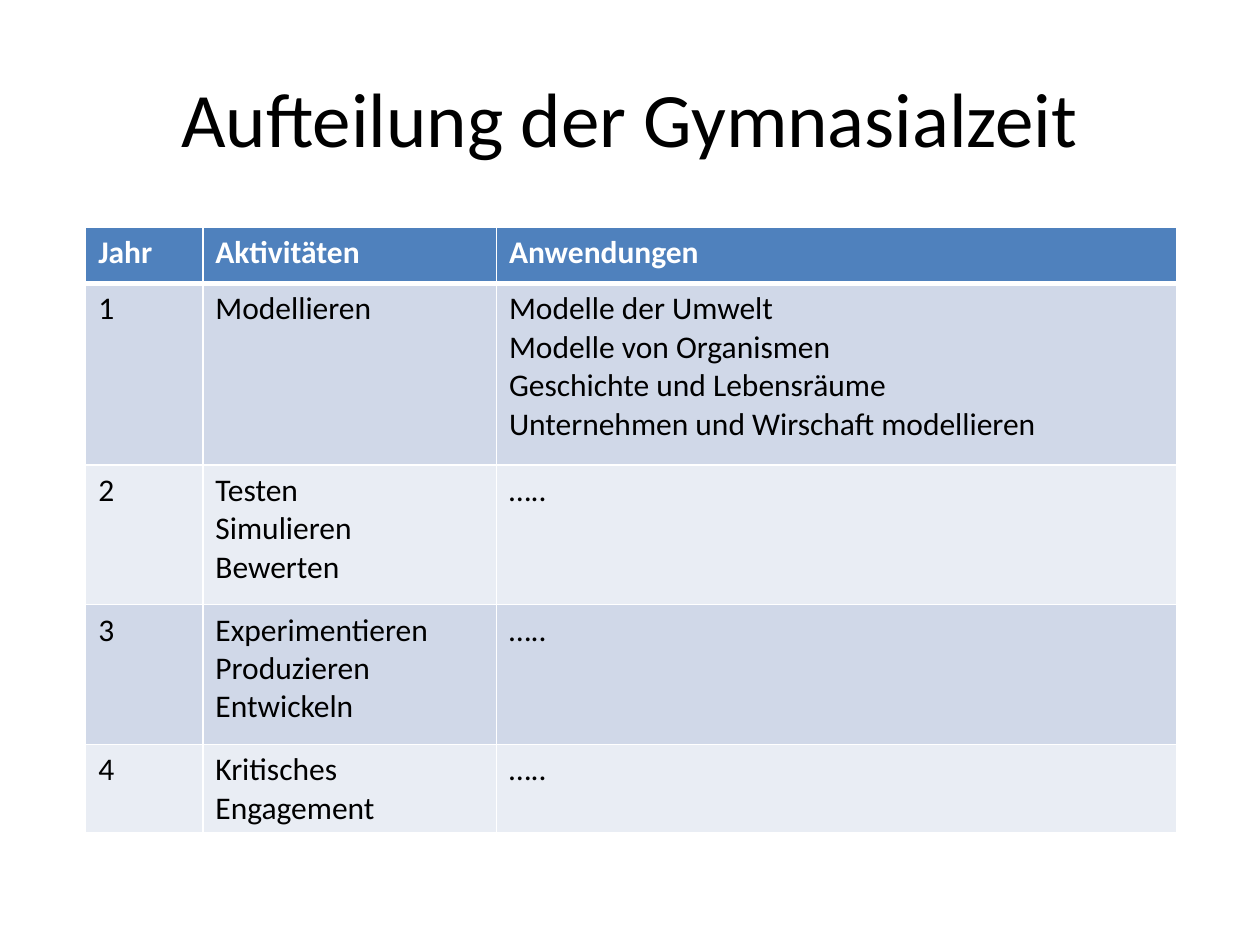
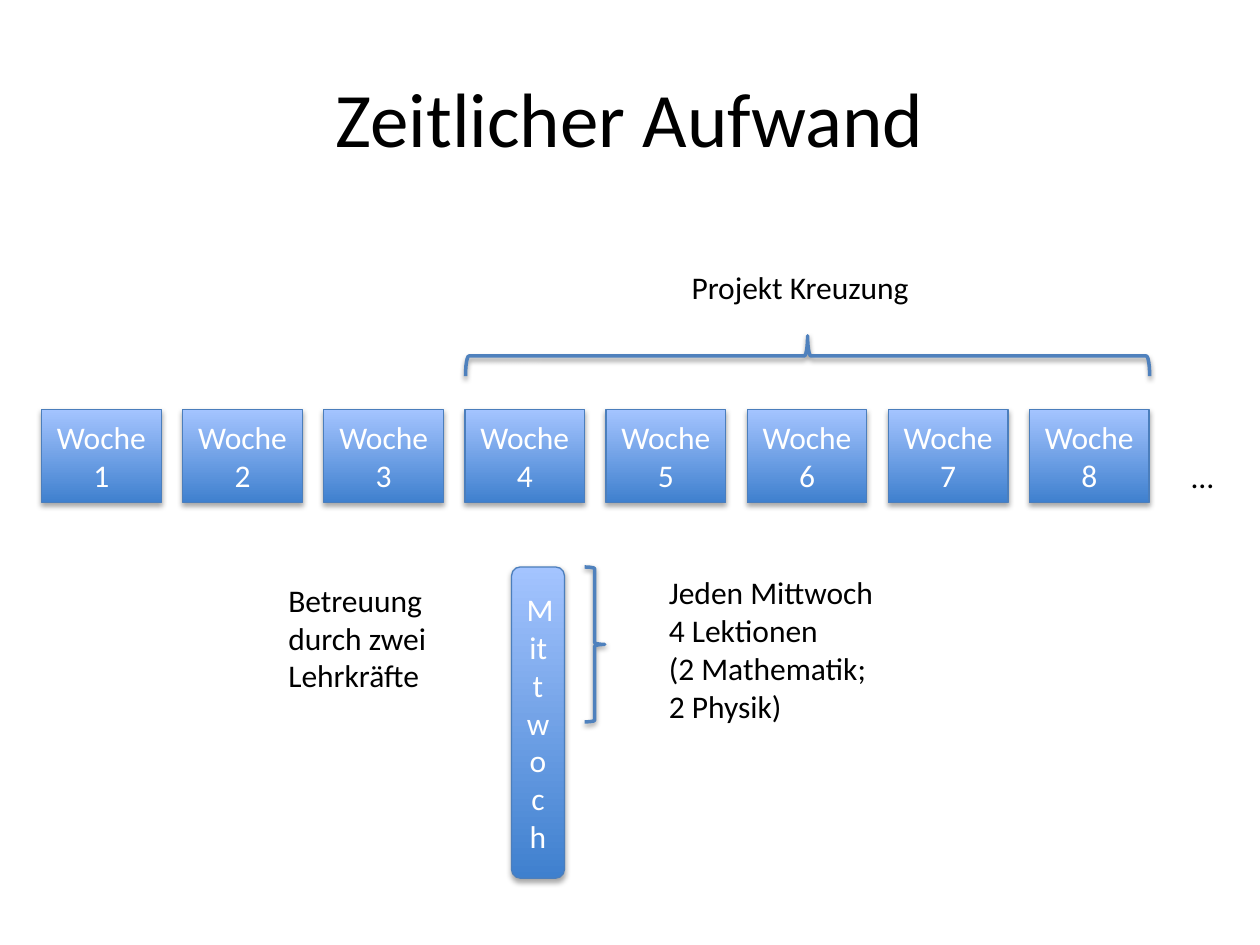
"""Builds two slides on the plan of a school project: years and weekly effort."""
from dataclasses import dataclass

from lxml import etree
from pptx import Presentation
from pptx.dml.color import RGBColor
from pptx.enum.shapes import MSO_SHAPE
from pptx.enum.text import MSO_ANCHOR, MSO_AUTO_SIZE, PP_ALIGN
from pptx.oxml.ns import qn
from pptx.presentation import Presentation as Deck
from pptx.shapes.autoshape import Shape
from pptx.slide import Slide
from pptx.table import _Cell
from pptx.text.text import TextFrame
from pptx.util import Emu, Inches, Pt

RECTANGLE = MSO_SHAPE.RECTANGLE
ROUNDED = MSO_SHAPE.ROUNDED_RECTANGLE
BRACE = MSO_SHAPE.RIGHT_BRACE
LEFT, CENTER = PP_ALIGN.LEFT, PP_ALIGN.CENTER
TOP, MIDDLE = MSO_ANCHOR.TOP, MSO_ANCHOR.MIDDLE
FIT_TEXT = MSO_AUTO_SIZE.SHAPE_TO_FIT_TEXT


@dataclass(frozen=True)
class Theme:
    """Colours, font, type sizes and line widths of the deck."""
    font: str = "Calibri"
    title_size: int = 44
    body_size: int = 18
    black: str = "000000"
    white: str = "FFFFFF"
    accent: str = "4F81BD"
    outline: str = "4B7EBC"
    gradient: tuple[str, str] = ("3F80CE", "A4C4FF")
    bands: tuple[str, str] = ("D0D8E8", "E9EDF4")
    block_line: float = 0.75
    brace_line: float = 2
    cell_line: float = 1
    header_line: float = 3


@dataclass(frozen=True)
class Area:
    """Place and size in inches."""
    left: float
    top: float
    width: float
    height: float

    def lengths(self) -> tuple[Emu, Emu, Emu, Emu]:
        """Return the four measures as lengths."""
        return (Inches(self.left), Inches(self.top),
                Inches(self.width), Inches(self.height))


@dataclass(frozen=True)
class Shadow:
    """Soft black shadow that falls straight down."""
    opacity: int
    distance: float
    blur: float = 3.1


@dataclass(frozen=True)
class Label:
    """Free text, one paragraph a line."""
    area: Area
    lines: tuple[str, ...]


@dataclass(frozen=True)
class Brace:
    """Right brace with its turn in degrees."""
    area: Area
    rotation: int = 0


@dataclass(frozen=True)
class Year:
    """One year of the school plan."""
    number: str
    activities: tuple[str, ...]
    applications: tuple[str, ...] = ("…..",)
    height: float = 1.11


THEME = Theme()
TITLE_AREA = Area(0.5, 0.3, 9, 1.25)
BLOCK_SHADOW = Shadow(35, 1.8)
BRACE_SHADOW = Shadow(38, 1.6)

PLAN_AREA = Area(0.68, 1.8, 8.66, 4.82)
PLAN_COLUMNS = (0.93, 2.33, 5.4)
HEADINGS = ("Jahr", "Aktivitäten", "Anwendungen")
HEADING_HEIGHT = 0.45
YEARS = (
    Year("1", ("Modellieren",),
         ("Modelle der Umwelt", "Modelle von Organismen",
          "Geschichte und Lebensräume",
          "Unternehmen und Wirschaft modellieren"), 1.44),
    Year("2", ("Testen", "Simulieren", "Bewerten")),
    Year("3", ("Experimentieren", "Produzieren", "Entwickeln")),
    Year("4", ("Kritisches Engagement",), height=0.7),
)

WEEK_COUNT = 8
WEEK_PITCH = 1.12
FIRST_WEEK = Area(0.33, 3.25, 0.95, 0.74)
WEDNESDAY = Area(4.06, 4.5, 0.42, 2.47)
BRACES = (
    Brace(Area(6.25, 0.11, 0.32, 5.43), 270),
    Brace(Area(4.64, 4.5, 0.16, 1.23)),
)
LABELS = (
    Label(Area(5.39, 2.08, 1.94, 0.4), ("Projekt Kreuzung",)),
    Label(Area(5.21, 4.5, 1.84, 1.31),
          ("Jeden Mittwoch", "4 Lektionen", "(2 Mathematik;", "2 Physik)")),
    Label(Area(9.36, 3.58, 0.38, 0.4), ("…",)),
    Label(Area(2.19, 4.56, 1.34, 1.01),
          ("Betreuung", "durch zwei", "Lehrkräfte")),
)


def write(frame: TextFrame, lines: tuple[str, ...], color: str,
          size: int = THEME.body_size, align: PP_ALIGN = LEFT,
          bold: bool = False) -> None:
    """Write each line as a paragraph of one run."""
    for index, line in enumerate(lines):
        para = frame.add_paragraph() if index else frame.paragraphs[0]
        para.alignment = align
        span = para.add_run()
        span.text = line
        span.font.name = THEME.font
        span.font.size = Pt(size)
        span.font.bold = bold
        span.font.color.rgb = RGBColor.from_string(color)


def add_titled_page(deck: Deck, title: str) -> Slide:
    """Add a blank page with a centred title."""
    page = deck.slides.add_slide(deck.slide_layouts[6])
    frame = page.shapes.add_textbox(*TITLE_AREA.lengths()).text_frame
    frame.word_wrap = True
    frame.vertical_anchor = MIDDLE
    write(frame, (title,), THEME.black, THEME.title_size, CENTER)
    return page


def add_label(page: Slide, label: Label) -> None:
    """Add text that does not wrap."""
    frame = page.shapes.add_textbox(*label.area.lengths()).text_frame
    frame.word_wrap = False
    frame.auto_size = FIT_TEXT
    frame.vertical_anchor = TOP
    write(frame, label.lines, THEME.black)


def outline(shape: Shape, color: str, width: float, shadow: Shadow) -> None:
    """Set a shape's line and its shadow."""
    shape.line.color.rgb = RGBColor.from_string(color)
    shape.line.width = Pt(width)
    shape.shadow.inherit = False
    effects = shape._element.spPr.find(qn("a:effectLst"))
    outer = etree.SubElement(
        effects, qn("a:outerShdw"), blurRad=str(Pt(shadow.blur)),
        dist=str(Pt(shadow.distance)), dir="5400000", rotWithShape="0")
    color_node = etree.SubElement(outer, qn("a:srgbClr"), val=THEME.black)
    etree.SubElement(color_node, qn("a:alpha"), val=str(shadow.opacity * 1000))


def add_block(page: Slide, kind: MSO_SHAPE, area: Area, text: str) -> None:
    """Add a block with a gradient and centred white text."""
    block = page.shapes.add_shape(kind, *area.lengths())
    block.fill.gradient()
    block.fill.gradient_angle = 90
    for stop, color in zip(block.fill.gradient_stops, THEME.gradient):
        stop.color.rgb = RGBColor.from_string(color)
    outline(block, THEME.outline, THEME.block_line, BLOCK_SHADOW)
    block.text_frame.word_wrap = True
    block.text_frame.vertical_anchor = MIDDLE
    write(block.text_frame, (text,), THEME.white, align=CENTER)


def add_brace(page: Slide, brace: Brace) -> None:
    """Add an open brace."""
    shape = page.shapes.add_shape(BRACE, *brace.area.lengths())
    shape.rotation = brace.rotation
    shape.fill.background()
    outline(shape, THEME.accent, THEME.brace_line, BRACE_SHADOW)


def paint_cell(cell: _Cell, fill: str, top: float, bottom: float) -> None:
    """Fill a cell and give it white borders."""
    cell.fill.solid()
    cell.fill.fore_color.rgb = RGBColor.from_string(fill)
    properties = cell._tc.get_or_add_tcPr()
    widths = {"a:lnL": THEME.cell_line, "a:lnR": THEME.cell_line,
              "a:lnT": top, "a:lnB": bottom}
    for index, (tag, width) in enumerate(widths.items()):
        border = etree.Element(qn(tag), w=str(Pt(width)))
        solid = etree.SubElement(border, qn("a:solidFill"))
        etree.SubElement(solid, qn("a:srgbClr"), val=THEME.white)
        properties.insert(index, border)


def build_plan(deck: Deck) -> None:
    """Build the page with the table of school years."""
    page = add_titled_page(deck, "Aufteilung der Gymnasialzeit")
    table = page.shapes.add_table(
        len(YEARS) + 1, len(HEADINGS), *PLAN_AREA.lengths()).table
    for column, width in zip(table.columns, PLAN_COLUMNS):
        column.width = Inches(width)
    heights = (HEADING_HEIGHT, *(year.height for year in YEARS))
    for row, height in zip(table.rows, heights):
        row.height = Inches(height)
    contents = [tuple((heading,) for heading in HEADINGS)]
    contents += [((year.number,), year.activities, year.applications)
                 for year in YEARS]
    for index, entries in enumerate(contents):
        header = index == 0
        fill = THEME.accent if header else THEME.bands[(index - 1) % 2]
        color = THEME.white if header else THEME.black
        top = THEME.header_line if index == 1 else THEME.cell_line
        bottom = THEME.header_line if header else THEME.cell_line
        for cell, lines in zip(table.rows[index].cells, entries):
            paint_cell(cell, fill, top, bottom)
            write(cell.text_frame, lines, color, bold=header)


def build_effort(deck: Deck) -> None:
    """Build the page with the weeks and the weekly lessons."""
    page = add_titled_page(deck, "Zeitlicher Aufwand")
    for index in range(WEEK_COUNT):
        area = Area(FIRST_WEEK.left + index * WEEK_PITCH, FIRST_WEEK.top,
                    FIRST_WEEK.width, FIRST_WEEK.height)
        add_block(page, RECTANGLE, area, f"Woche {index + 1}")
    add_block(page, ROUNDED, WEDNESDAY, "Mittwoch")
    for brace in BRACES:
        add_brace(page, brace)
    for label in LABELS:
        add_label(page, label)


def main() -> None:
    """Build and save the deck."""
    deck = Presentation()
    deck.slide_width, deck.slide_height = Inches(10), Inches(7.5)
    build_plan(deck)
    build_effort(deck)
    deck.save("out.pptx")


if __name__ == "__main__":
    main()
